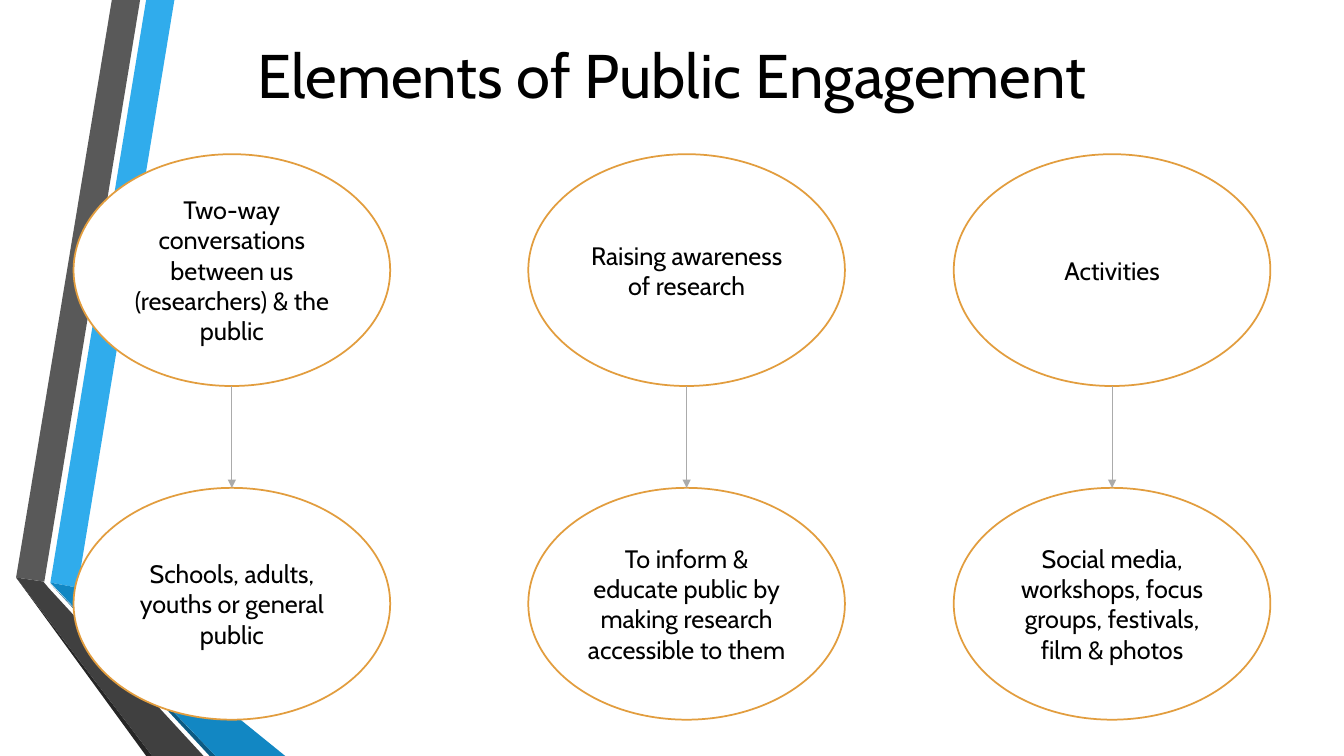
import pptx
import pptx.dml.color
import pptx.enum.shapes
import pptx.enum.text
import pptx.oxml.ns
import pptx.util
from lxml import etree

Inches = pptx.util.Inches
Pt = pptx.util.Pt
RGBColor = pptx.dml.color.RGBColor
qn = pptx.oxml.ns.qn

BLACK = RGBColor(0x00, 0x00, 0x00)
WHITE = RGBColor(0xFF, 0xFF, 0xFF)
ORANGE = RGBColor(0xE2, 0x9D, 0x3E)
ARROW_GREY = RGBColor(0xAB, 0xAB, 0xAB)
SKY_BLUE = RGBColor(0x30, 0xAC, 0xEC)
MID_BLUE = RGBColor(0x12, 0x87, 0xC3)
DEEP_BLUE = RGBColor(0x0C, 0x5A, 0x82)
GREY = RGBColor(0x59, 0x59, 0x59)
DARK_GREY = RGBColor(0x40, 0x40, 0x40)
CHARCOAL = RGBColor(0x26, 0x26, 0x26)

RIBBON_FACETS = [
    (SKY_BLUE, [(0.5, 5.78), (0.77, 5.83), (1.73, 0), (1.45, 0)]),
    (GREY, [(1.39, 0), (1.11, 0), (0.16, 5.73), (0.44, 5.77)]),
    (CHARCOAL, [(0.16, 5.73), (1.45, 7.5), (1.51, 7.5)]),
    (DEEP_BLUE, [(0.5, 5.79), (2.08, 7.5), (2.14, 7.5)]),
    (MID_BLUE, [(0.5, 5.78), (2.14, 7.5), (2.83, 7.5), (0.77, 5.83)]),
    (DARK_GREY, [(2.02, 7.5), (0.48, 5.83), (0.43, 5.77), (0.16, 5.73), (1.51, 7.5)]),
]

OVAL_WIDTH, OVAL_HEIGHT = 3.14, 2.3
ELEMENT_TOP, DETAIL_TOP = 1.53, 4.84
ELEMENTS = [
    (0.73, "Two-way conversations between us (researchers) & the public",
     "Schools, adults, youths or general public"),
    (5.24, "Raising awareness of research",
     "To inform & educate public by making research accessible to them"),
    (9.46, "Activities",
     "Social media, workshops, focus groups, festivals, film & photos"),
]


class EngagementSlide:
    font = "Cabin"

    def __init__(self, slide):
        self.shapes = slide.shapes

    def centred_text(self, frame, text, size):
        frame.word_wrap = True
        paragraph = frame.paragraphs[0]
        paragraph.alignment = pptx.enum.text.PP_ALIGN.CENTER
        run = paragraph.add_run()
        run.text = text
        run.font.name = self.font
        run.font.size = Pt(size)
        run.font.color.rgb = BLACK

    def facet(self, color, points):
        """Draw one flat, borderless piece of the folded ribbon."""
        corners = [(Inches(x), Inches(y)) for x, y in points]
        builder = self.shapes.build_freeform(*corners[0])
        builder.add_line_segments(corners[1:], close=True)
        piece = builder.convert_to_shape()
        piece.shadow.inherit = False
        piece.fill.solid()
        piece.fill.fore_color.rgb = color
        piece.line.fill.background()

    def title(self, text):
        heading = self.shapes.add_textbox(Inches(1.99), Inches(0.32), Inches(9.35), Inches(0.84))
        self.centred_text(heading.text_frame, text, 44)

    def oval(self, left, top, text):
        bubble = self.shapes.add_shape(
            pptx.enum.shapes.MSO_SHAPE.OVAL,
            Inches(left), Inches(top), Inches(OVAL_WIDTH), Inches(OVAL_HEIGHT))
        bubble.shadow.inherit = False
        bubble.fill.solid()
        bubble.fill.fore_color.rgb = WHITE
        bubble.line.color.rgb = ORANGE
        bubble.line.width = Pt(1.25)
        bubble.text_frame.vertical_anchor = pptx.enum.text.MSO_ANCHOR.MIDDLE
        self.centred_text(bubble.text_frame, text, 18)

    def down_arrow(self, x, top, bottom):
        arrow = self.shapes.add_connector(
            pptx.enum.shapes.MSO_CONNECTOR.STRAIGHT,
            Inches(x), Inches(top), Inches(x), Inches(bottom))
        arrow.line.color.rgb = ARROW_GREY
        arrow.line.width = Pt(0.75)
        properties = arrow.line._get_or_add_ln()
        etree.SubElement(properties, qn("a:tailEnd"), type="triangle")
        etree.SubElement(properties.getparent(), qn("a:effectLst"))


def main():
    deck = pptx.Presentation()
    deck.slide_width = Inches(13.33)
    deck.slide_height = Inches(7.5)
    page = EngagementSlide(deck.slides.add_slide(deck.slide_layouts[6]))

    for color, points in RIBBON_FACETS:
        page.facet(color, points)
    page.title("Elements of Public Engagement")
    for left, element, detail in ELEMENTS:
        page.oval(left, ELEMENT_TOP, element)
        page.oval(left, DETAIL_TOP, detail)
        page.down_arrow(left + OVAL_WIDTH / 2, ELEMENT_TOP + OVAL_HEIGHT, DETAIL_TOP)

    deck.save("out.pptx")


if __name__ == "__main__":
    main()
